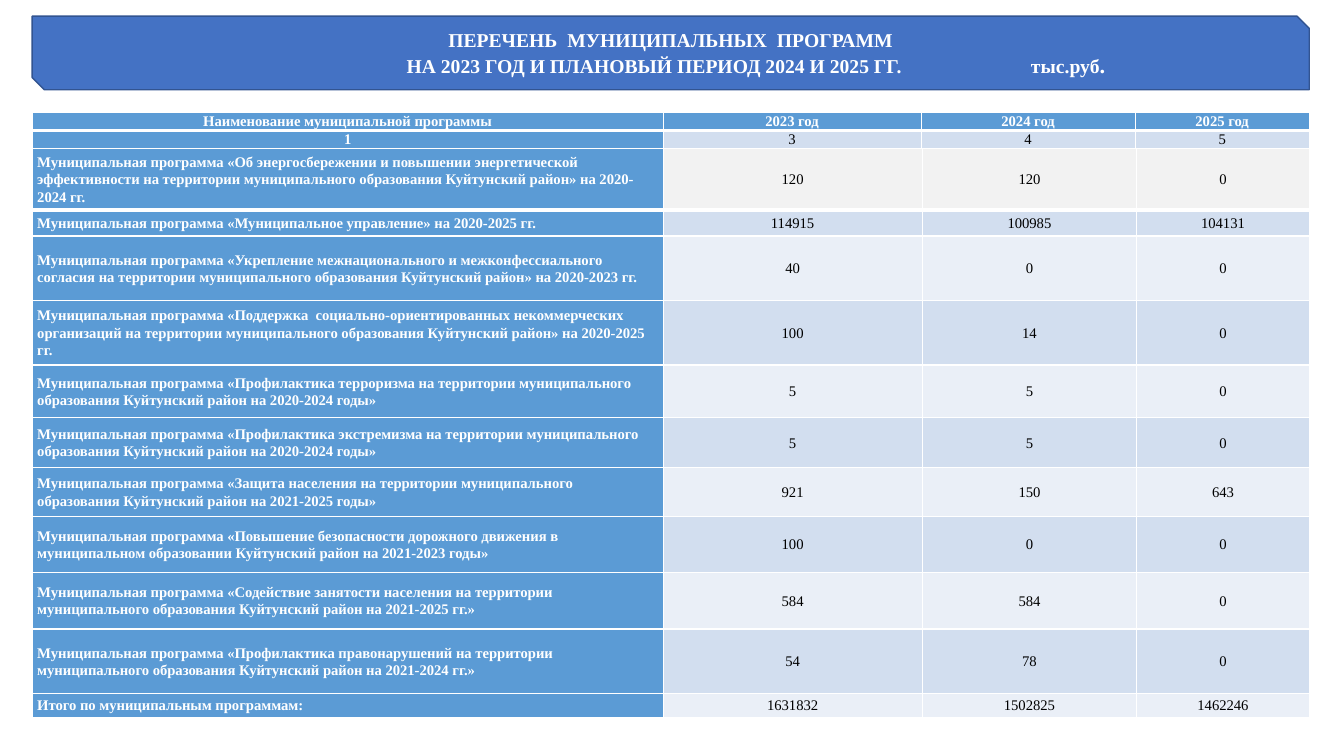
"""Build a slide listing municipal programmes and their funding for 2023-2025."""
from lxml import etree
from pptx import Presentation
from pptx.dml.color import RGBColor
from pptx.enum import shapes, text
from pptx.oxml import ns
from pptx.util import Pt

FONT = "Times New Roman"
WHITE = RGBColor(0xFF, 0xFF, 0xFF)
BLACK = RGBColor(0x00, 0x00, 0x00)
BANNER_BLUE = RGBColor(0x44, 0x72, 0xC4)
BANNER_EDGE = RGBColor(0x32, 0x54, 0x91)
HEAD_BLUE = RGBColor(0x5B, 0x9B, 0xD5)
BAND_DARK = RGBColor(0xD2, 0xDE, 0xEF)
BAND_LIGHT = RGBColor(0xEA, 0xEF, 0xF7)
GREY = RGBColor(0xF2, 0xF2, 0xF2)
LEFT, WIDTH = 23, 912.2


def add_run(paragraph, words, size, color, bold):
    run = paragraph.add_run()
    run.text = words
    run.font.name = FONT
    run.font.size = Pt(size)
    run.font.bold = bold
    run.font.color.rgb = color


def add_grid(top, widths, heights, rows, bands, inset, name_align):
    grid = slide.shapes.add_table(len(rows), len(widths), Pt(LEFT), Pt(top),
                                  Pt(WIDTH), Pt(sum(heights))).table
    grid.first_row = grid.horz_banding = False
    for column, width in zip(grid.columns, widths):
        column.width = Pt(width)
    for r, (row, height, band) in enumerate(zip(rows, heights, bands)):
        grid.rows[r].height = Pt(height)
        for c, words in enumerate(row):
            cell = grid.cell(r, c)
            cell.margin_left = cell.margin_right = Pt(inset)
            cell.margin_top = cell.margin_bottom = 0
            cell.vertical_anchor = text.MSO_ANCHOR.MIDDLE
            properties = cell._tc.get_or_add_tcPr()
            for side in ("lnL", "lnR", "lnT", "lnB"):
                weight = 3 if r == 0 and side == "lnB" else 1
                edge = etree.SubElement(properties, ns.qn("a:" + side), w=str(Pt(weight)))
                paint = etree.SubElement(edge, ns.qn("a:solidFill"))
                etree.SubElement(paint, ns.qn("a:srgbClr"), val=str(WHITE))
            fill = HEAD_BLUE if c == 0 else band
            cell.fill.solid()
            cell.fill.fore_color.rgb = fill
            paragraph = cell.text_frame.paragraphs[0]
            paragraph.alignment = text.PP_ALIGN.CENTER if c else name_align
            paragraph.line_spacing = 1.07
            heading = fill == HEAD_BLUE
            add_run(paragraph, words, 10.5, WHITE if heading else BLACK, heading)


deck = Presentation()
deck.slide_width, deck.slide_height = Pt(960), Pt(540)
slide = deck.slides.add_slide(deck.slide_layouts[6])

banner = slide.shapes.add_shape(shapes.MSO_SHAPE.SNIP_2_DIAG_RECTANGLE,
                                Pt(LEFT), Pt(11.5), Pt(WIDTH), Pt(52.6))
banner.shadow.inherit = False
banner.fill.solid()
banner.fill.fore_color.rgb = BANNER_BLUE
banner.line.color.rgb = BANNER_EDGE
banner.line.width = Pt(1)
banner.text_frame.word_wrap = True
banner.text_frame.vertical_anchor = text.MSO_ANCHOR.MIDDLE
title = banner.text_frame.paragraphs[0]
title.alignment = text.PP_ALIGN.CENTER
add_run(title, "ПЕРЕЧЕНЬ  МУНИЦИПАЛЬНЫХ  ПРОГРАММ", 14, WHITE, True)
period = banner.text_frame.add_paragraph()
period.alignment = text.PP_ALIGN.LEFT
tab_stops = etree.SubElement(period._p.get_or_add_pPr(), ns.qn("a:tabLst"))
for stop in (256, 702):
    etree.SubElement(tab_stops, ns.qn("a:tab"), pos=str(Pt(stop)), algn="l")
add_run(period, "\tНА 2023 ГОД И ПЛАНОВЫЙ ПЕРИОД 2024 И 2025 ГГ.\tтыс.руб", 14, WHITE, True)
add_run(period, ".", 16, WHITE, True)

programs = [
    ("Муниципальная программа «Об энергосбережении и повышении энергетической эффективности "
     "на территории муниципального образования Куйтунский район» на 2020-2024 гг.",
     "120", "120", "0"),
    ("Муниципальная программа «Муниципальное управление» на 2020-2025 гг.",
     "114915", "100985", "104131"),
    ("Муниципальная программа «Укрепление межнационального и межконфессиального согласия "
     "на территории муниципального образования Куйтунский район» на 2020-2023 гг.",
     "40", "0", "0"),
    ("Муниципальная программа «Поддержка  социально-ориентированных некоммерческих организаций "
     "на территории муниципального образования Куйтунский район» на 2020-2025 гг.",
     "100", "14", "0"),
    ("Муниципальная программа «Профилактика терроризма на территории муниципального "
     "образования Куйтунский район на 2020-2024 годы»", "5", "5", "0"),
    ("Муниципальная программа «Профилактика экстремизма на территории муниципального "
     "образования Куйтунский район на 2020-2024 годы»", "5", "5", "0"),
    ("Муниципальная программа «Защита населения на территории муниципального "
     "образования Куйтунский район на 2021-2025 годы»", "921", "150", "643"),
    ("Муниципальная программа «Повышение безопасности дорожного движения в муниципальном "
     "образовании Куйтунский район на 2021-2023 годы»", "100", "0", "0"),
    ("Муниципальная программа «Содействие занятости населения на территории муниципального "
     "образования Куйтунский район на 2021-2025 гг.»", "584", "584", "0"),
    ("Муниципальная программа «Профилактика правонарушений на территории муниципального "
     "образования Куйтунский район на 2021-2024 гг.»", "54", "78", "0"),
    ("Итого по муниципальным программам:", "1631832", "1502825", "1462246"),
]
program_heights = [43.9, 18.7, 46.1, 46.1, 37.4, 36, 34.6, 40.3, 40.3, 46.1, 16.9]
program_bands = [GREY] + [BAND_DARK, BAND_LIGHT] * 5
add_grid(106, [450.7, 185, 153.4, 123.1], program_heights, programs,
         program_bands, 3.6, text.PP_ALIGN.LEFT)

headings = [
    ("Наименование муниципальной программы", "2023 год", "2024 год", "2025 год"),
    ("1", "3", "4", "5"),
]
add_grid(80.4, [450.7, 184.3, 152.9, 124.3], [12.8, 12.8], headings,
         [HEAD_BLUE, BAND_DARK], 5, text.PP_ALIGN.CENTER)

deck.save("out.pptx")
